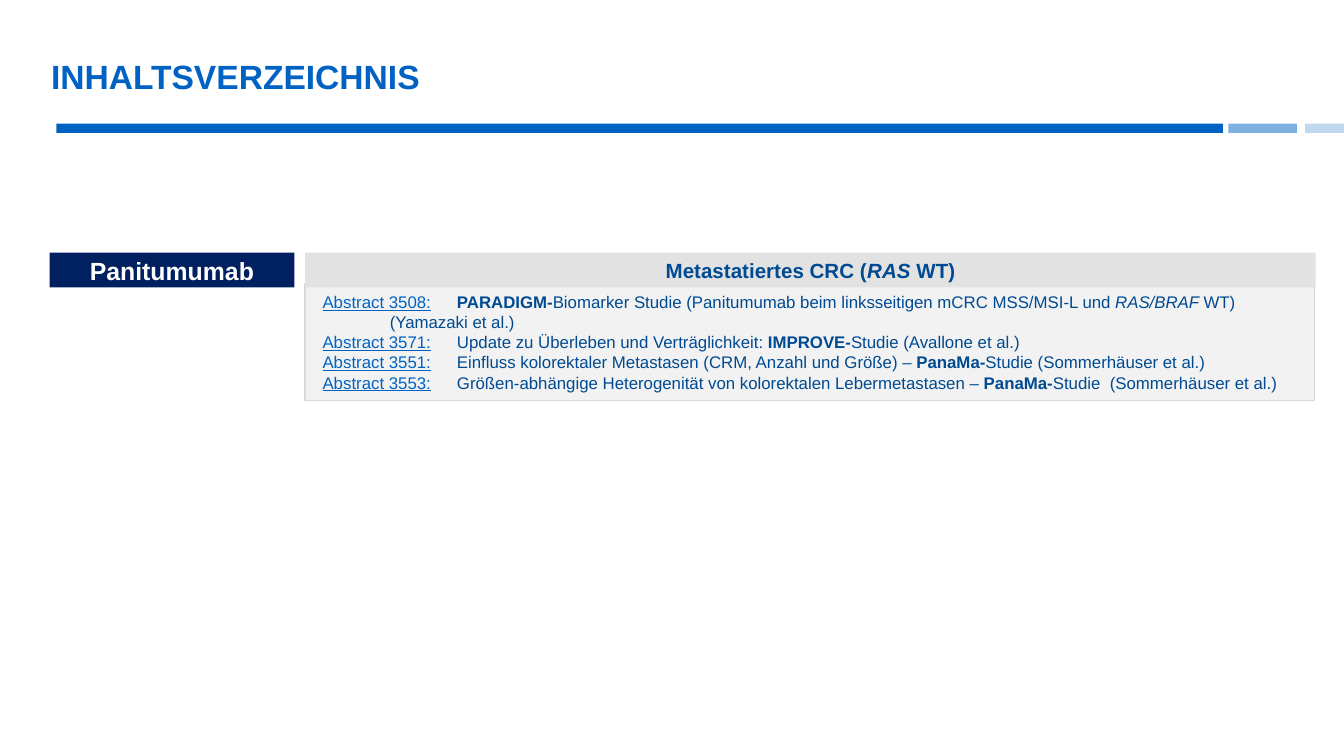
"""Builds the table-of-contents slide for the Panitumumab abstracts."""
from lxml.etree import SubElement
from pptx import Presentation
from pptx.dml.color import RGBColor
from pptx.enum.shapes import MSO_SHAPE as Shape
from pptx.enum.text import MSO_ANCHOR as Anchor, PP_ALIGN as Align
from pptx.oxml.ns import qn
from pptx.util import Inches, Pt

COLORS = {"blue": "0063C3", "text": "004A92", "navy": "002060", "white": "FFFFFF",
          "header": "E2E2E2", "panel": "F2F2F2", "border": "D9D9D9"}
FONT = "Arial"

TITLE = "INHALTSVERZEICHNIS"
DRUG = "Panitumumab"
HEADING = [("Metastatiertes CRC (", "b"), ("RAS", "bi"), (" WT)", "b")]
ABSTRACTS = [
    ("3508", [("\t", ""), ("PARADIGM-", "b"),
              ("Biomarker Studie (Panitumumab beim linksseitigen mCRC MSS/MSI-L und ", ""),
              ("RAS/BRAF ", "i"), ("WT) ", ""), ("\n", ""), ("\t(Yamazaki et al.)", "")]),
    ("3571", [("\tUpdate zu Überleben und Verträglichkeit: ", ""),
              ("IMPROVE-", "b"), ("Studie (Avallone et al.)", "")]),
    ("3551", [("\tEinfluss kolorektaler Metastasen (CRM, Anzahl und Größe) – ", ""),
              ("PanaMa-", "b"), ("Studie (Sommerhäuser et al.)", "")]),
    ("3553", [("\tGrößen-abhängige Heterogenität von kolorektalen Lebermetastasen – ", ""),
              ("PanaMa-", "b"), ("Studie  (Sommerhäuser et al.)", "")]),
]
BARS = [(0.42, 8.68, 100), (9.14, 0.51, 50), (9.71, 0.29, 25)]


def rgb(name):
    return RGBColor.from_string(COLORS[name])


def set_frame(box, insets, anchor):
    frame = box.text_frame
    frame.word_wrap = True
    frame.vertical_anchor = anchor
    (frame.margin_left, frame.margin_top,
     frame.margin_right, frame.margin_bottom) = map(Inches, insets)
    return frame


def add_rect(page, place, fill, border=None):
    box = page.shapes.add_shape(Shape.RECTANGLE, *map(Inches, place))
    box.shadow.inherit = False
    box.fill.solid()
    box.fill.fore_color.rgb = rgb(fill)
    if border:
        box.line.color.rgb = rgb(border)
        box.line.width = Pt(0.75)
    else:
        box.line.fill.background()
    set_frame(box, (0.13, 0.07, 0.13, 0.07), Anchor.MIDDLE)
    return box


def add_spans(para, spans, size, color):
    for text, style in spans:
        if text == "\n":
            para.add_line_break()
            continue
        span = para.add_run()
        span.text = text
        font = span.font
        font.name, font.size, font.color.rgb = FONT, Pt(size), rgb(color)
        font.bold, font.italic, font.underline = (mark in style for mark in "biu")


def add_bar(page, left, width, opacity):
    bar = add_rect(page, (left, 0.92, width, 0.07), "blue")
    if opacity < 100:
        color = bar.fill._xPr.find(".//" + qn("a:srgbClr"))
        SubElement(color, qn("a:alpha"), val=str(opacity * 1000))


def add_title(page):
    box = page.shapes.add_textbox(*map(Inches, (0.38, 0.27, 9.22, 0.5)))
    para = set_frame(box, (0, 0, 0, 0.05), Anchor.BOTTOM).paragraphs[0]
    para.line_spacing = 0.9
    add_spans(para, [(TITLE, "b")], 18, "blue")


def add_label(page, left, width, fill, spans, size, color):
    box = add_rect(page, (left, 1.88, width, 0.26), fill)
    para = box.text_frame.paragraphs[0]
    para.alignment = Align.CENTER
    add_spans(para, spans, size, color)


def add_abstracts(page):
    frame = add_rect(page, (2.27, 2.11, 7.51, 0.87), "panel", "border").text_frame
    for index, (number, spans) in enumerate(ABSTRACTS):
        para = frame.add_paragraph() if index else frame.paragraphs[0]
        para.alignment = Align.LEFT
        add_spans(para, [(f"Abstract {number}:", "u")], 9, "blue")
        add_spans(para, spans, 9, "text")


def main():
    deck = Presentation()
    deck.slide_width = Inches(10)
    deck.slide_height = deck.slide_width * 9 // 16
    page = deck.slides.add_slide(deck.slide_layouts[6])
    for bar in BARS:
        add_bar(page, *bar)
    add_title(page)
    add_label(page, 0.37, 1.82, "navy", [(DRUG, "b")], 13.3, "white")
    add_abstracts(page)
    add_label(page, 2.27, 7.52, "header", HEADING, 11, "text")
    deck.save("out.pptx")


if __name__ == "__main__":
    main()
